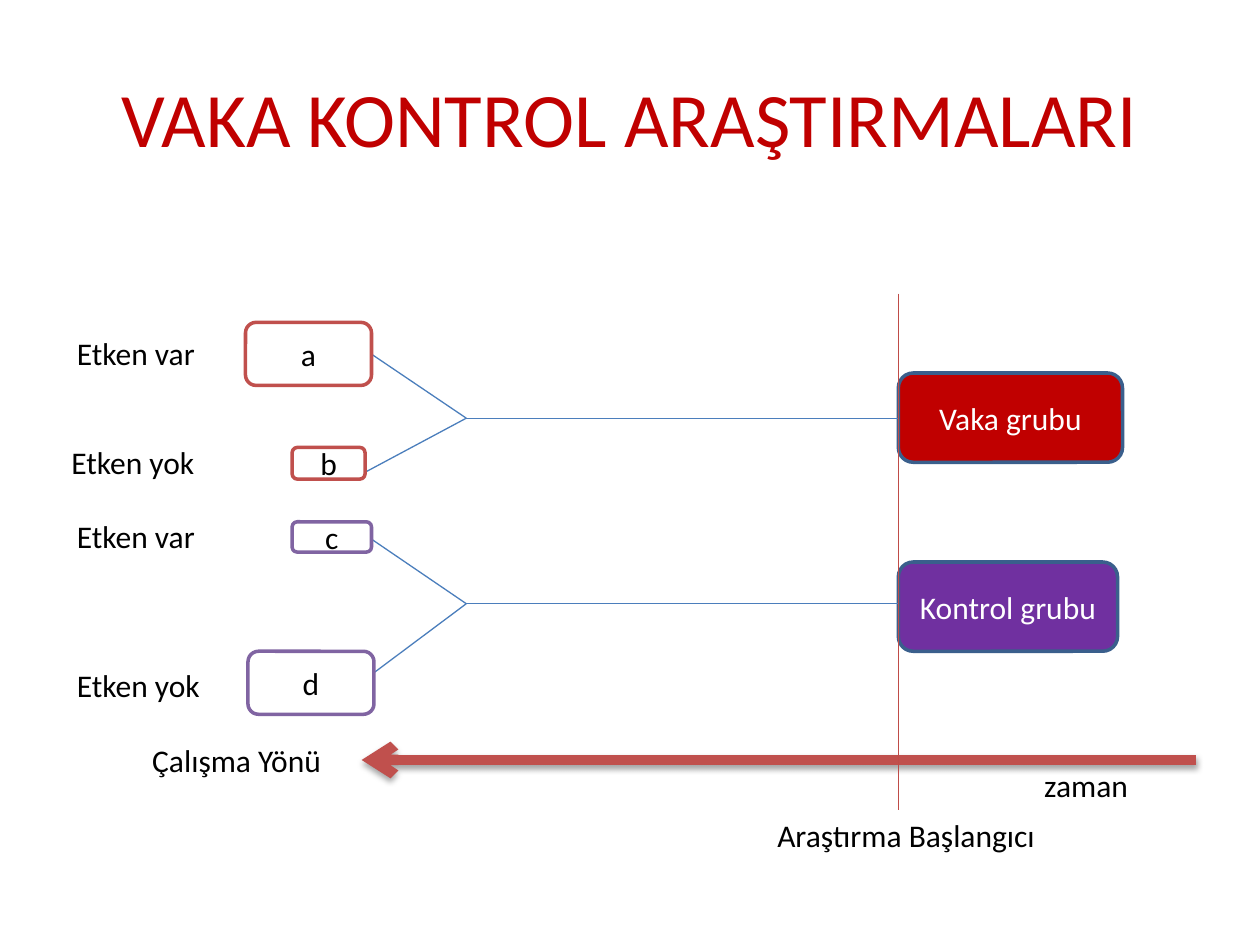
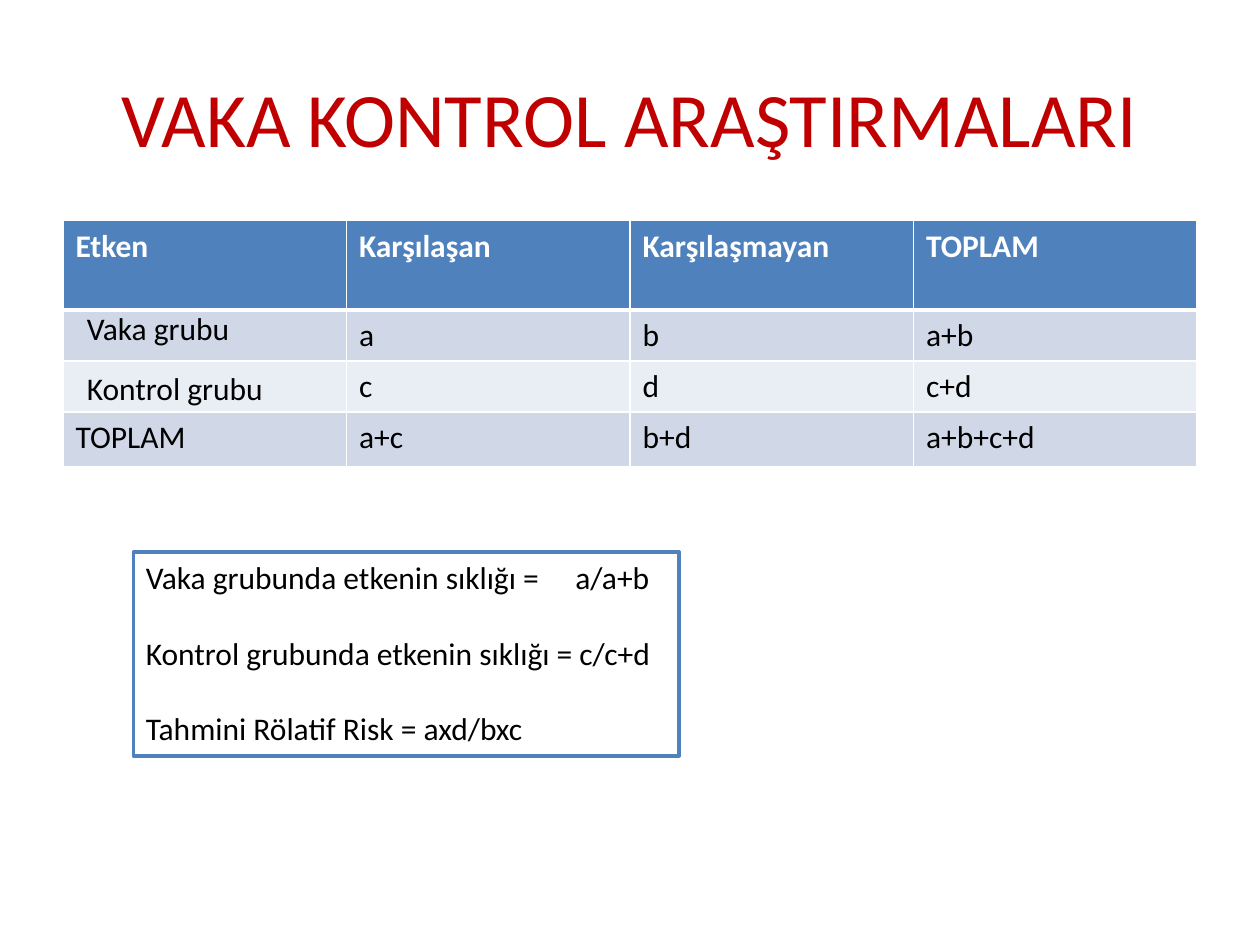
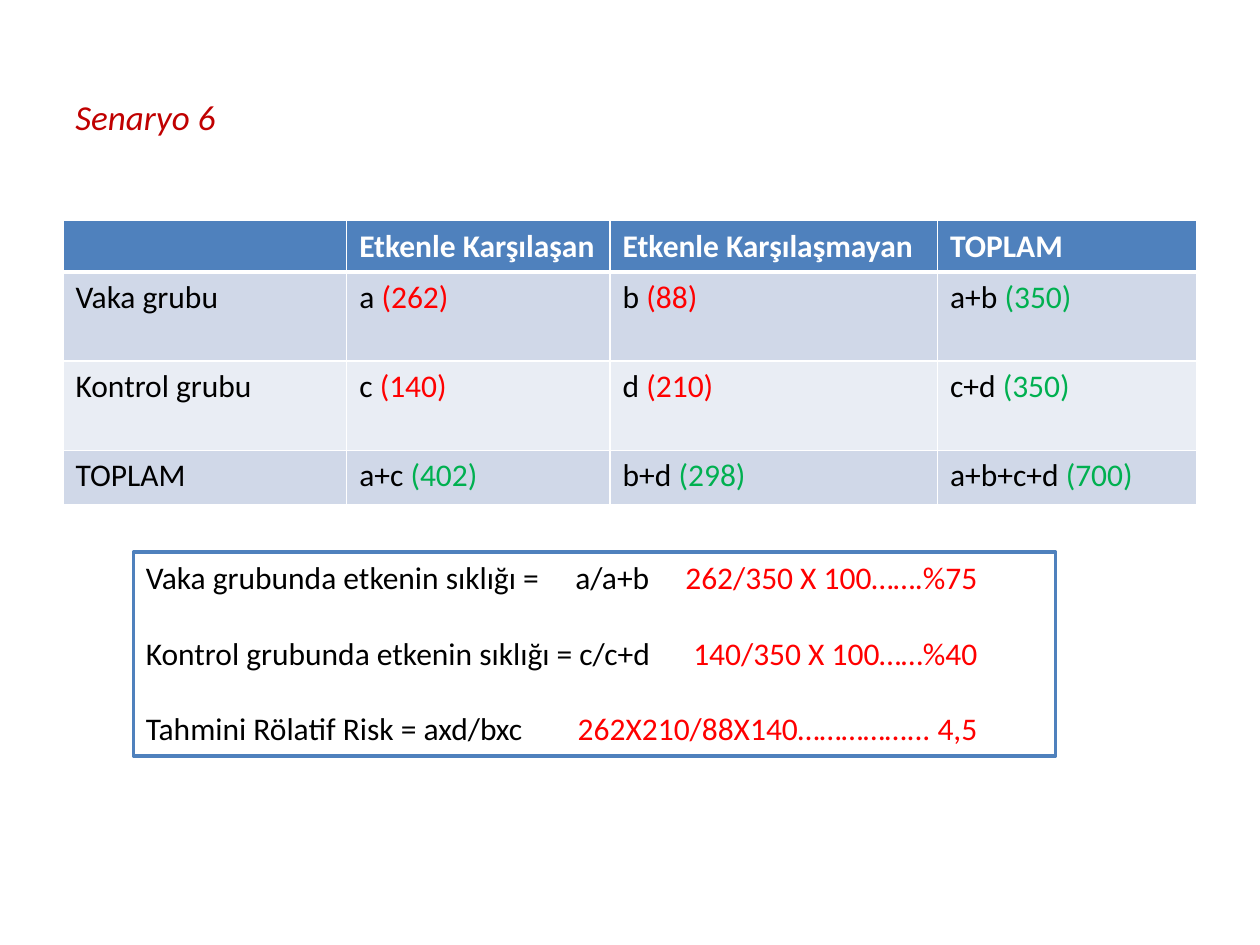
from dataclasses import dataclass

from lxml import etree
from pptx import Presentation
from pptx import util as u
from pptx.dml import color
from pptx.enum import shapes, text
from pptx.oxml import ns


@dataclass(frozen=True)
class Theme:
    font: str = "Calibri"
    title_size: int = 44
    scenario_size: int = 20
    body_size: int = 18
    formula_gap: float = 21.5
    box_line: float = 2
    thin_line: float = 0.75
    arrow_line: float = 6
    title: str = "C00000"
    ink: str = "000000"
    paper: str = "FFFFFF"
    count: str = "FF0000"
    total: str = "00B050"
    case_fill: str = "C00000"
    control_fill: str = "7030A0"
    group_edge: str = "3A5F8C"
    case_edge: str = "C0504D"
    control_edge: str = "8064A2"
    branch: str = "4B7EBC"
    start_line: str = "BF4C48"
    accent: str = "4F81BD"
    bands: tuple = ("D0D8E8", "E9EDF4")


THEME = Theme()

# Content; lengths are centimetres
TITLE = "VAKA KONTROL ARAŞTIRMALARI"
SCENARIO = "Senaryo 6"
LABEL_HEIGHT = 1.02
GROUP_LEFT, GROUP_HEIGHT = 18.11, 1.8
JOIN_X = 9.4

# group: name, top, width, fill, edge of its boxes, height of the fork, boxes
# box: letter, left, top, width, height, height of the branch end
GROUPS = [
    ("Vaka grubu", 7.52, 4.52, THEME.case_fill, THEME.case_edge, 8.43,
     [("a", 4.95, 6.5, 2.54, 1.27, 7.14), ("b", 5.89, 9.02, 1.47, 0.64, 9.52)]),
    ("Kontrol grubu", 11.33, 4.42, THEME.control_fill, THEME.control_edge, 12.17,
     [("c", 5.89, 10.52, 1.6, 0.61, 10.87), ("d", 5, 13.13, 2.54, 1.27, 13.56)]),
]
# label: words, left, top, width
DIAGRAM_LABELS = [
    ("Etken var", 1.3, 6.6, 2.92),
    ("Etken yok", 1.19, 8.81, 3.02),
    ("Etken var", 1.3, 10.29, 2.92),
    ("Etken yok", 1.3, 13.31, 3.02),
    ("zaman", 20.8, 15.32, 2.21),
    ("Araştırma Başlangıcı", 15.42, 16.33, 5.77),
    ("Çalışma Yönü", 2.82, 14.81, 3.96),
]
ROW_LABELS = [("Vaka grubu", 1.5, 6.1, 3.43), ("Kontrol grubu", 1.5, 7.32, 4.11)]

SYMBOL_TABLE = [
    ["Etken", "Karşılaşan", "Karşılaşmayan", "TOPLAM"],
    ["", "a", "b", "a+b"],
    ["", "c", "d", "c+d"],
    ["TOPLAM", "a+c", "b+d", "a+b+c+d"],
]
SCENARIO_TABLE = [
    ["", "Etkenle Karşılaşan", "Etkenle Karşılaşmayan", "TOPLAM"],
    ["Vaka grubu", ("a ", "(262)"), ("b ", "(88)"), ("a+b ", "(350)")],
    ["Kontrol grubu", ("c ", "(140)"), ("d ", "(210)"), ("c+d ", "(350)")],
    ["TOPLAM", ("a+c ", "(402)"), ("b+d ", "(298)"), ("a+b+c+d ", "(700)")],
]
FORMULA_TAB, RESULT_TAB = 10.15, 16.77
# formula: words, right-aligned tab stops it uses, result in the scenario
FORMULAS = [
    ("Vaka grubunda etkenin sıklığı =\ta/a+b", [FORMULA_TAB], "262/350 X 100…….%75"),
    ("Kontrol grubunda etkenin sıklığı = c/c+d", [], "140/350 X 100……%40"),
    ("Tahmini Rölatif Risk = axd/bxc", [], "262X210/88X140……………... 4,5"),
]


def cm(*lengths):
    return [u.Cm(length) for length in lengths]


def rgb(value):
    return color.RGBColor.from_string(value)


def add_run(paragraph, words, ink=THEME.ink, size=THEME.body_size, bold=False, italic=False):
    run = paragraph.add_run()
    run.text = words
    font = run.font
    font.name, font.size, font.bold, font.italic = THEME.font, u.Pt(size), bold, italic
    font.color.rgb = rgb(ink)


def add_title(slide, words, size, align, italic=False):
    frame = slide.shapes.add_textbox(*cm(1.27, 0.76, 22.86, 3.18)).text_frame
    frame.word_wrap = True
    frame.vertical_anchor = text.MSO_ANCHOR.MIDDLE
    frame.paragraphs[0].alignment = align
    add_run(frame.paragraphs[0], words, THEME.title, size, italic=italic)


def add_labels(slide, labels):
    for words, left, top, width in labels:
        frame = slide.shapes.add_textbox(*cm(left, top, width, LABEL_HEIGHT)).text_frame
        frame.word_wrap = False
        add_run(frame.paragraphs[0], words)


def add_box(slide, kind, place, fill, edge):
    shape = slide.shapes.add_shape(kind, *cm(*place))
    shape.shadow.inherit = False
    shape.fill.solid()
    shape.fill.fore_color.rgb = rgb(fill)
    shape.line.color.rgb = rgb(edge)
    shape.line.width = u.Pt(THEME.box_line)
    shape.text_frame.word_wrap = True
    return shape


def add_named_box(slide, words, place, fill, edge, ink):
    shape = add_box(slide, shapes.MSO_SHAPE.ROUNDED_RECTANGLE, place, fill, edge)
    shape.text_frame.vertical_anchor = text.MSO_ANCHOR.MIDDLE
    paragraph = shape.text_frame.paragraphs[0]
    paragraph.alignment = text.PP_ALIGN.CENTER
    add_run(paragraph, words, ink)


def add_line(slide, ends, ink, width=THEME.thin_line):
    """Draw a straight line and return it with its empty effect list."""
    line = slide.shapes.add_connector(shapes.MSO_CONNECTOR.STRAIGHT, *cm(*ends))
    line.line.color.rgb = rgb(ink)
    line.line.width = u.Pt(width)
    effects = etree.SubElement(line._element.spPr, ns.qn("a:effectLst"))
    return line, effects


def add_time_arrow(slide):
    arrow, effects = add_line(slide, (24.1, 15.32, 7.29, 15.32),
                              THEME.case_edge, THEME.arrow_line)
    etree.SubElement(arrow.line._get_or_add_ln(), ns.qn("a:tailEnd"), type="arrow")
    shadow = etree.SubElement(effects, ns.qn("a:outerShdw"), blurRad=str(u.Pt(3.1)),
                              dist=str(u.Pt(1.8)), dir="5400000", rotWithShape="0")
    shade = etree.SubElement(shadow, ns.qn("a:srgbClr"), val=THEME.ink)
    etree.SubElement(shade, ns.qn("a:alpha"), val="35000")


def set_borders(cell, row):
    """White rules, with a heavy one under the header row."""
    widths = {"L": 1, "R": 1, "T": 3 if row == 1 else 1, "B": 3 if row == 0 else 1}
    properties = cell._tc.get_or_add_tcPr()
    for index, (side, width) in enumerate(widths.items()):
        border = etree.Element(ns.qn(f"a:ln{side}"), w=str(u.Pt(width)))
        fill = etree.SubElement(border, ns.qn("a:solidFill"))
        etree.SubElement(fill, ns.qn("a:srgbClr"), val=THEME.paper)
        properties.insert(index, border)


def add_table(slide, rows, widths, heights):
    place = cm(1.27, 4.45, sum(widths), sum(heights))
    table = slide.shapes.add_table(len(rows), len(widths), *place).table
    for column, width in zip(table.columns, widths):
        column.width = u.Cm(width)
    for row, height in zip(table.rows, heights):
        row.height = u.Cm(height)
    for r, values in enumerate(rows):
        for c, value in enumerate(values):
            cell = table.cell(r, c)
            cell.fill.solid()
            cell.fill.fore_color.rgb = rgb(THEME.bands[(r - 1) % 2] if r else THEME.accent)
            set_borders(cell, r)
            symbol, number = value if isinstance(value, tuple) else (value, "")
            paragraph = cell.text_frame.paragraphs[0]
            if symbol:
                add_run(paragraph, symbol, THEME.ink if r else THEME.paper, bold=r == 0)
            if number:
                is_total = r == len(rows) - 1 or c == len(values) - 1
                add_run(paragraph, number, THEME.total if is_total else THEME.count)


def set_right_tabs(paragraph, stops):
    tabs = etree.SubElement(paragraph._p.get_or_add_pPr(), ns.qn("a:tabLst"))
    for stop in stops:
        etree.SubElement(tabs, ns.qn("a:tab"), pos=str(u.Cm(stop)), algn="r")


def add_formulas(slide, width, with_results):
    shape = add_box(slide, shapes.MSO_SHAPE.RECTANGLE, (2.69, 11.13, width, 4.11),
                    THEME.paper, THEME.accent)
    frame = shape.text_frame
    frame.vertical_anchor = text.MSO_ANCHOR.TOP
    for index, (formula, stops, result) in enumerate(FORMULAS):
        paragraph = frame.add_paragraph() if index else frame.paragraphs[0]
        paragraph.alignment = text.PP_ALIGN.LEFT
        if index:
            paragraph.space_before = u.Pt(THEME.formula_gap)
        set_right_tabs(paragraph, stops + [RESULT_TAB] * with_results)
        add_run(paragraph, formula)
        if with_results:
            add_run(paragraph, "\t" + result, THEME.count)


def build_diagram(slide):
    add_title(slide, TITLE, THEME.title_size, text.PP_ALIGN.CENTER)
    for name, top, width, fill, edge, fork_y, boxes in GROUPS:
        add_named_box(slide, name, (GROUP_LEFT, top, width, GROUP_HEIGHT),
                      fill, THEME.group_edge, THEME.paper)
        add_line(slide, (GROUP_LEFT, fork_y, JOIN_X, fork_y), THEME.branch)
        for letter, left, box_top, box_width, height, branch_y in boxes:
            add_line(slide, (JOIN_X, fork_y, left + box_width, branch_y), THEME.branch)
            add_named_box(slide, letter, (left, box_top, box_width, height),
                          THEME.paper, edge, THEME.ink)
    add_time_arrow(slide)
    add_line(slide, (GROUP_LEFT, 5.92, GROUP_LEFT, 16.33), THEME.start_line)
    add_labels(slide, DIAGRAM_LABELS)


def build_symbols(slide):
    add_title(slide, TITLE, THEME.title_size, text.PP_ALIGN.CENTER)
    add_table(slide, SYMBOL_TABLE, [5.715] * 4, [1.8, 1.03, 1.03, 1.09])
    add_formulas(slide, 11, with_results=False)
    add_labels(slide, ROW_LABELS)


def build_scenario(slide):
    add_title(slide, SCENARIO, THEME.scenario_size, text.PP_ALIGN.LEFT, italic=True)
    add_table(slide, SCENARIO_TABLE, [5.72, 5.31, 6.6, 5.23], [1.03, 1.8, 1.8, 1.09])
    add_formulas(slide, 18.59, with_results=True)


def main():
    presentation = Presentation()
    presentation.slide_width, presentation.slide_height = cm(25.4, 19.05)
    for build in (build_diagram, build_symbols, build_scenario):
        build(presentation.slides.add_slide(presentation.slide_layouts[6]))
    presentation.save("out.pptx")


if __name__ == "__main__":
    main()
